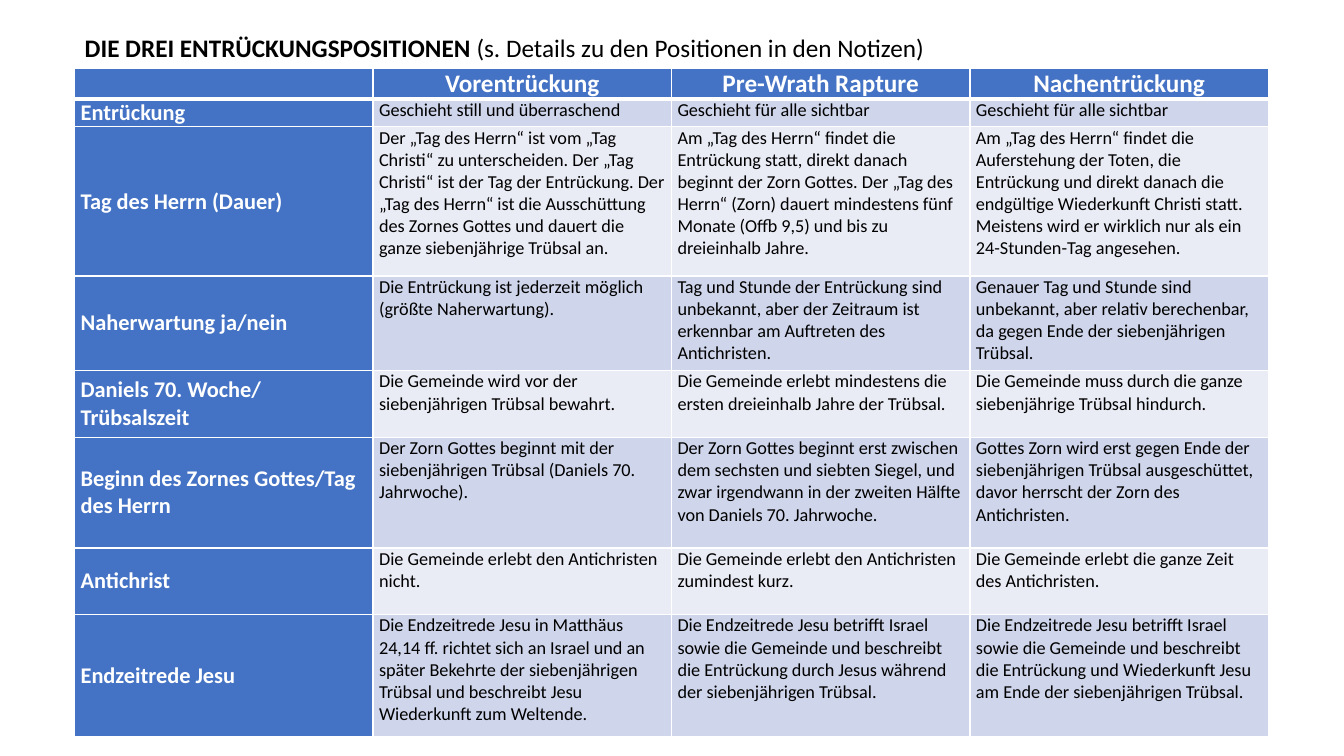
from pptx import Presentation
from pptx import util as u
from pptx.dml.color import RGBColor
from pptx.enum import text
from pptx.oxml import parse_xml
from pptx.oxml.ns import nsdecls

WHITE = RGBColor(0xFF, 0xFF, 0xFF)
BLACK = RGBColor(0, 0, 0)
BLUE = RGBColor(0x44, 0x72, 0xC4)
BANDS = [RGBColor(0xE9, 0xEB, 0xF5), RGBColor(0xCF, 0xD5, 0xEA)]

HEADINGS = ["", "Vorentrückung", "Pre-Wrath Rapture", "Nachentrückung"]
TOPICS = [
    ["Entrückung",
     "Geschieht still und überraschend",
     "Geschieht für alle sichtbar",
     "Geschieht für alle sichtbar"],
    ["Tag des Herrn (Dauer)",
     "Der „Tag des Herrn“ ist vom „Tag Christi“ zu unterscheiden. Der „Tag Christi“ ist der Tag der "
     "Entrückung. Der „Tag des Herrn“ ist die Ausschüttung des Zornes Gottes und dauert die ganze "
     "siebenjährige Trübsal an.",
     "Am „Tag des Herrn“ findet die Entrückung statt, direkt danach beginnt der Zorn Gottes. Der „Tag "
     "des Herrn“ (Zorn) dauert mindestens fünf Monate (Offb 9,5) und bis zu dreieinhalb Jahre.",
     "Am „Tag des Herrn“ findet die Auferstehung der Toten, die Entrückung und direkt danach die "
     "endgültige Wiederkunft Christi statt. Meistens wird er wirklich nur als ein 24-Stunden-Tag "
     "angesehen."],
    ["Naherwartung ja/nein",
     "Die Entrückung ist jederzeit möglich (größte Naherwartung).",
     "Tag und Stunde der Entrückung sind unbekannt, aber der Zeitraum ist erkennbar am Auftreten des "
     "Antichristen.",
     "Genauer Tag und Stunde sind unbekannt, aber relativ berechenbar, da gegen Ende der "
     "siebenjährigen Trübsal."],
    ["Daniels 70. Woche/\nTrübsalszeit",
     "Die Gemeinde wird vor der siebenjährigen Trübsal bewahrt.",
     "Die Gemeinde erlebt mindestens die ersten dreieinhalb Jahre der Trübsal.",
     "Die Gemeinde muss durch die ganze siebenjährige Trübsal hindurch."],
    ["Beginn des Zornes Gottes/Tag des Herrn",
     "Der Zorn Gottes beginnt mit der siebenjährigen Trübsal (Daniels 70. Jahrwoche).",
     "Der Zorn Gottes beginnt erst zwischen dem sechsten und siebten Siegel, und zwar irgendwann in "
     "der zweiten Hälfte von Daniels 70. Jahrwoche.",
     "Gottes Zorn wird erst gegen Ende der siebenjährigen Trübsal ausgeschüttet, davor herrscht der "
     "Zorn des Antichristen."],
    ["Antichrist",
     "Die Gemeinde erlebt den Antichristen nicht.",
     "Die Gemeinde erlebt den Antichristen zumindest kurz.",
     "Die Gemeinde erlebt die ganze Zeit des Antichristen."],
    ["Endzeitrede Jesu",
     "Die Endzeitrede Jesu in Matthäus 24,14 ff. richtet sich an Israel und an später Bekehrte der "
     "siebenjährigen Trübsal und beschreibt Jesu Wiederkunft zum Weltende.",
     "Die Endzeitrede Jesu betrifft Israel sowie die Gemeinde und beschreibt die Entrückung durch "
     "Jesus während der siebenjährigen Trübsal.",
     "Die Endzeitrede Jesu betrifft Israel sowie die Gemeinde und beschreibt die Entrückung und "
     "Wiederkunft Jesu am Ende der siebenjährigen Trübsal."],
]
ROW_HEIGHTS = [0.3, 0.27, 1.48, 0.94, 0.66, 1.1, 0.66, 1.21]
COLUMN_WIDTH = 2.96
LEFT = 0.74

HEADING_FORMAT = {"size": u.Pt(18), "bold": True, "name": "Calibri"}
TOPIC_FORMAT = {"size": u.Pt(16), "bold": True, "name": "Calibri"}
POSITION_FORMAT = {"size": u.Pt(13), "bold": False, "name": "Calibri"}
CELL_MARGINS = {"margin_left": u.Inches(0.06), "margin_right": u.Inches(0.06),
                "margin_top": 0, "margin_bottom": 0}


def format_font(font, values, color):
    for key, value in values.items():
        setattr(font, key, value)
    font.color.rgb = color


def add_border(cell, side, points):
    cell._tc.get_or_add_tcPr().append(parse_xml(
        f'<a:ln{side} {nsdecls("a")} w="{u.Pt(points)}"><a:solidFill>'
        f'<a:srgbClr val="{WHITE}"/></a:solidFill></a:ln{side}>'))


prs = Presentation()
prs.slide_width, prs.slide_height = u.Inches(13.33), u.Inches(7.5)
slide = prs.slides.add_slide(prs.slide_layouts[5])

heading = slide.shapes.title
heading.left, heading.top = u.Inches(LEFT), u.Inches(0.27)
heading.width, heading.height = u.Inches(9.84), u.Inches(0.4)
heading.text_frame.auto_size = text.MSO_AUTO_SIZE.NONE
heading.text_frame.vertical_anchor = text.MSO_ANCHOR.TOP
heading_line = heading.text_frame.paragraphs[0]
heading_line.alignment = text.PP_ALIGN.LEFT
for words, bold in [("DIE DREI ENTRÜCKUNGSPOSITIONEN ", True),
                    ("(s. Details zu den Positionen in den Notizen)", False)]:
    part = heading_line.add_run()
    part.text = words
    format_font(part.font, {**HEADING_FORMAT, "bold": bold}, BLACK)

rows = [HEADINGS] + TOPICS
comparison = slide.shapes.add_table(
    len(rows), len(HEADINGS), u.Inches(LEFT), u.Inches(0.68),
    u.Inches(COLUMN_WIDTH * len(HEADINGS)), u.Inches(sum(ROW_HEIGHTS))).table
comparison.first_col = True
for column in comparison.columns:
    column.width = u.Inches(COLUMN_WIDTH)

for r, (height, entries) in enumerate(zip(ROW_HEIGHTS, rows)):
    comparison.rows[r].height = u.Inches(height)
    for c, entry in enumerate(entries):
        cell = comparison.cell(r, c)
        is_label = r == 0 or c == 0
        values = HEADING_FORMAT if r == 0 else TOPIC_FORMAT if c == 0 else POSITION_FORMAT
        for key, value in CELL_MARGINS.items():
            setattr(cell, key, value)
        cell.vertical_anchor = text.MSO_ANCHOR.MIDDLE if is_label else text.MSO_ANCHOR.TOP
        for side, points in [("L", 1), ("R", 1), ("T", 3 if r == 1 else 1), ("B", 3 if r == 0 else 1)]:
            add_border(cell, side, points)
        cell.fill.solid()
        cell.fill.fore_color.rgb = BLUE if is_label else BANDS[r % 2]
        if entry:
            cell.text = entry
        for line in cell.text_frame.paragraphs:
            line.alignment = text.PP_ALIGN.CENTER if r == 0 else text.PP_ALIGN.LEFT
            for run in line.runs:
                format_font(run.font, values, WHITE if is_label else BLACK)

prs.save("out.pptx")
